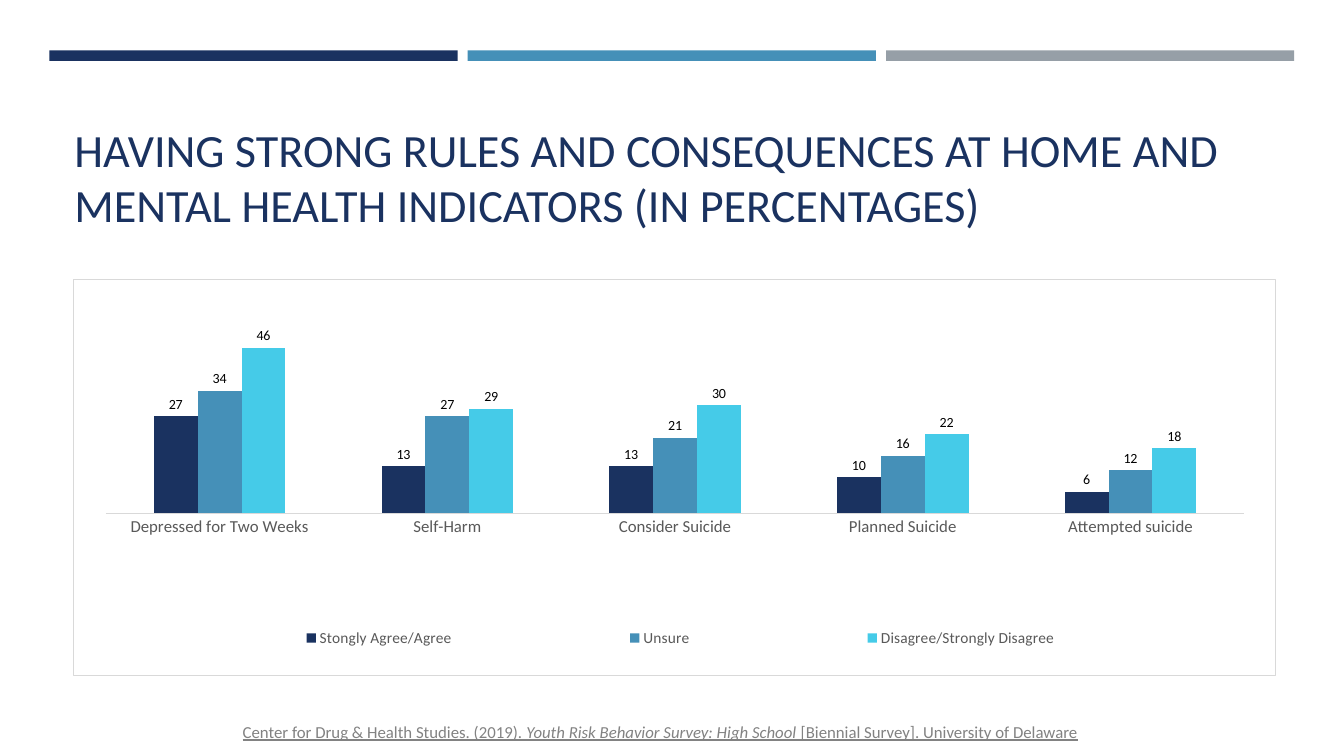
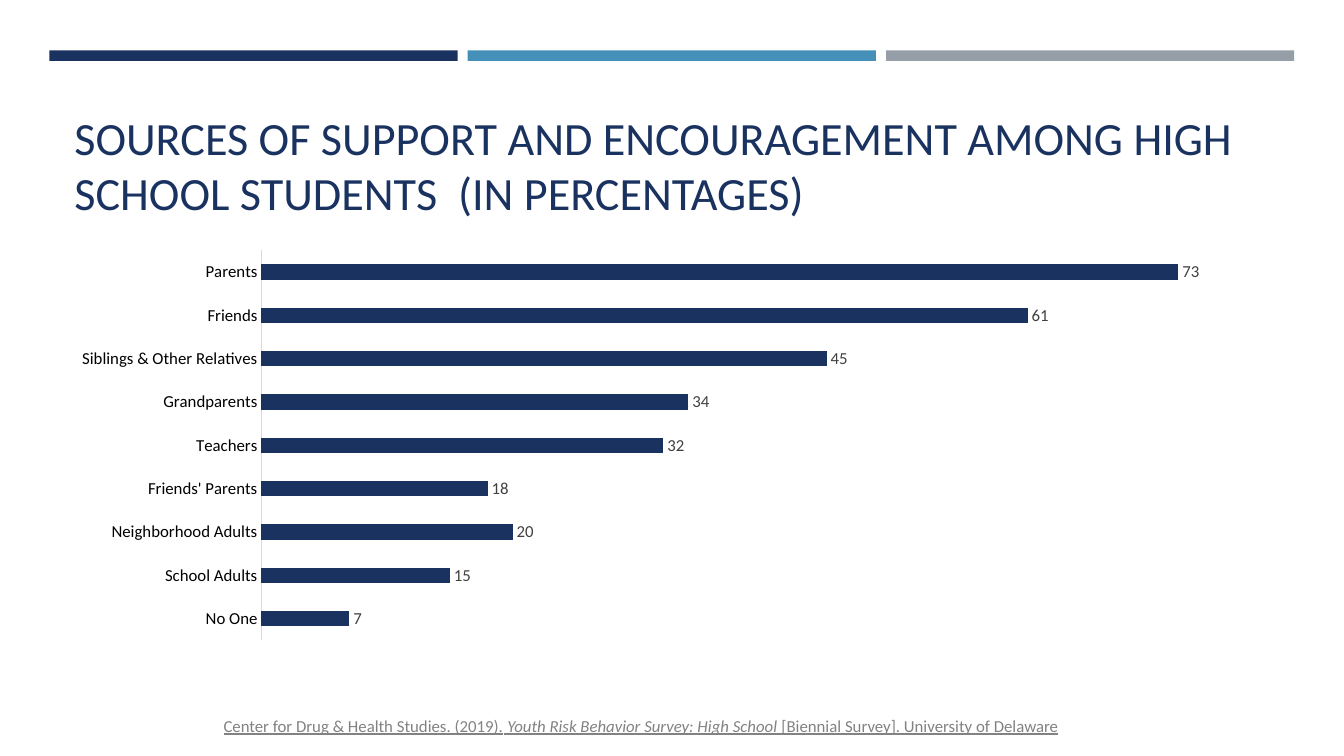
from lxml import etree
from pptx import Presentation
from pptx import util as u
from pptx.chart.data import CategoryChartData
from pptx.dml.color import RGBColor
from pptx.enum import chart as charts, shapes, text
from pptx.oxml import ns, parse_xml

NAVY = RGBColor(0x1A, 0x32, 0x60)
BLUE = RGBColor(0x45, 0x90, 0xB8)
CYAN = RGBColor(0x45, 0xCB, 0xE8)
GRAY = RGBColor(0x96, 0x9F, 0xA7)
CITE = RGBColor(0x82, 0x82, 0x82)
BLACK = RGBColor(0, 0, 0)
DARK = RGBColor(0x40, 0x40, 0x40)
MID = RGBColor(0x59, 0x59, 0x59)
PALE = RGBColor(0xD9, 0xD9, 0xD9)
FONT = "Calibri"

CITATION = [
    ("Center for Drug & Health Studies. (2019).", False),
    (" Youth Risk Behavior Survey: High School ", True),
    ("[Biennial Survey]. University of Delaware", False),
]
INDICATORS = ["Depressed for Two Weeks", "Self-Harm", "Consider Suicide",
              "Planned Suicide", "Attempted suicide"]
ANSWERS = [
    ("Stongly Agree/Agree", [27, 13, 13, 10, 6], NAVY),
    ("Unsure", [34, 27, 21, 16, 12], BLUE),
    ("Disagree/Strongly Disagree", [46, 29, 30, 22, 18], CYAN),
]
SUPPORT = {
    "Parents": 73, "Friends": 61, "Siblings & Other Relatives": 45,
    "Grandparents": 34, "Teachers": 32, "Friends' Parents": 18,
    "Neighborhood Adults": 20, "School Adults": 15, "No One": 7,
}


def points(box):
    """Turn a box of four numbers into lengths in points."""
    return [u.Pt(value) for value in box]


def style_font(font, size, color):
    """Set the shared typeface with a size and colour."""
    font.name = FONT
    font.size = u.Pt(size)
    font.color.rgb = color


def add_text(page, box, spans, size, color, underline=None,
             anchor=text.MSO_ANCHOR.TOP, after=0):
    """Write one paragraph of (wording, italic) spans in a box."""
    frame = page.shapes.add_textbox(*points(box)).text_frame
    frame.word_wrap = True
    frame.vertical_anchor = anchor
    para = frame.paragraphs[0]
    para.space_after = u.Pt(after)
    for wording, italic in spans:
        span = para.add_run()
        span.text = wording
        style_font(span.font, size, color)
        span.font.italic = italic
        span.font.underline = underline


def add_bands(page, box, gap=7.2):
    """Draw the three coloured bands evenly across a box."""
    left, top, width, height = box
    colors = [NAVY, BLUE, GRAY]
    band_width = (width - gap * (len(colors) - 1)) / len(colors)
    for index, color in enumerate(colors):
        place = left + index * (band_width + gap), top, band_width, height
        band = page.shapes.add_shape(shapes.MSO_SHAPE.RECTANGLE, *points(place))
        band.shadow.inherit = False
        band.fill.solid()
        band.fill.fore_color.rgb = color
        band.line.fill.background()


def add_page(deck, title, title_top, cite_box):
    """Add a page with bands, title and citation."""
    page = deck.slides.add_slide(deck.slide_layouts[6])
    add_bands(page, (35.3, 36, 889.2, 7.5))
    add_text(page, (46, title_top, 865.5, 112.3), [(title, False)], 33, NAVY,
             anchor=text.MSO_ANCHOR.BOTTOM, after=6)
    add_text(page, cite_box, CITATION, 12, CITE, underline=True)
    return page


def make_layout(fractions, inner=False):
    """Build a manual chart layout from x, y, width and height fractions."""
    layout = etree.Element(ns.qn("c:layout"))
    manual = etree.SubElement(layout, ns.qn("c:manualLayout"))
    settings = [("layoutTarget", "inner")] if inner else []
    settings += [("xMode", "edge"), ("yMode", "edge")]
    settings += zip("xywh", fractions)
    for name, value in settings:
        etree.SubElement(manual, ns.qn("c:" + name)).set("val", str(value))
    return layout


def drop_layout(node):
    """Remove any layout a chart part already has."""
    for old in node.findall(ns.qn("c:layout")):
        node.remove(old)


def add_bar_chart(page, box, kind, names, series, gap, maximum, plot_place,
                  axis_color, label_size, label_color):
    """Add a bar chart with value labels and a hidden value axis."""
    data = CategoryChartData()
    data.categories = names
    for name, values, _ in series:
        data.add_series(name, values)
    chart = page.shapes.add_chart(kind, *points(box), data).chart
    style_font(chart.font, 10, BLACK)
    chart.has_title = False
    chart.has_legend = False

    value_axis = chart.value_axis
    value_axis.minimum_scale = 0
    value_axis.maximum_scale = maximum
    value_axis.has_major_gridlines = False
    value_axis.visible = False
    name_axis = chart.category_axis
    name_axis.major_tick_mark = charts.XL_TICK_MARK.NONE
    name_axis.format.line.color.rgb = PALE
    name_axis.format.line.width = u.Pt(0.75)
    style_font(name_axis.tick_labels.font, 12, axis_color)

    plot = chart.plots[0]
    plot.gap_width = gap
    plot.overlap = 0
    plot.vary_by_categories = False
    plot.has_data_labels = True
    labels = plot.data_labels
    labels.show_value = True
    labels.position = charts.XL_LABEL_POSITION.OUTSIDE_END
    style_font(labels.font, label_size, label_color)
    for bars, (_, _, color) in zip(plot.series, series):
        bars.format.fill.solid()
        bars.format.fill.fore_color.rgb = color

    area = chart._chartSpace.chart.plotArea
    drop_layout(area)
    area.insert(0, make_layout(plot_place, inner=True))
    return chart


def add_legend(chart, place):
    """Put a legend along the bottom of a chart."""
    chart.has_legend = True
    legend = chart.legend
    legend.position = charts.XL_LEGEND_POSITION.BOTTOM
    legend.include_in_layout = False
    style_font(legend.font, 11, MID)
    node = legend._element
    drop_layout(node)
    node.find(ns.qn("c:legendPos")).addnext(make_layout(place))


def add_frame(chart):
    """Give a chart a white ground and a thin pale border."""
    chart._chartSpace.chart.addnext(parse_xml(
        f'<c:spPr {ns.nsdecls("c", "a")}>'
        '<a:solidFill><a:srgbClr val="FFFFFF"/></a:solidFill>'
        f'<a:ln w="{u.Pt(0.75)}"><a:solidFill><a:srgbClr val="{PALE}"/>'
        '</a:solidFill></a:ln></c:spPr>'))


def build_rules_page(deck):
    """Build the page on rules at home and mental health."""
    page = add_page(deck, "HAVING STRONG RULES AND CONSEQUENCES AT HOME AND "
                    "MENTAL HEALTH INDICATORS (IN PERCENTAGES)",
                    57, (166.3, 512, 666.7, 21.6))
    chart = add_bar_chart(
        page, (52, 199.4, 859.6, 283.7), charts.XL_CHART_TYPE.COLUMN_CLUSTERED,
        INDICATORS, ANSWERS, 219, 60, (0.027, 0.045, 0.947, 0.545),
        MID, 10, BLACK)
    add_legend(chart, (0.05, 0.86, 0.91, 0.09))
    add_frame(chart)


def build_support_page(deck):
    """Build the page on sources of support."""
    page = add_page(deck, "SOURCES OF SUPPORT AND ENCOURAGEMENT AMONG HIGH "
                    "SCHOOL STUDENTS  (IN PERCENTAGES)",
                    48.3, (152.6, 507.6, 652.3, 21.6))
    names = list(reversed(SUPPORT))
    series = [("Series 1", [SUPPORT[name] for name in names], NAVY)]
    add_bar_chart(
        page, (38.2, 174.2, 895, 310.3), charts.XL_CHART_TYPE.BAR_CLUSTERED,
        names, series, 182, 80, (0.166, 0.015, 0.802, 0.898),
        BLACK, 12, DARK)


def main():
    """Build and save the deck."""
    deck = Presentation()
    deck.slide_width = u.Pt(960)
    deck.slide_height = u.Pt(540)
    build_rules_page(deck)
    build_support_page(deck)
    deck.save("out.pptx")


if __name__ == "__main__":
    main()
